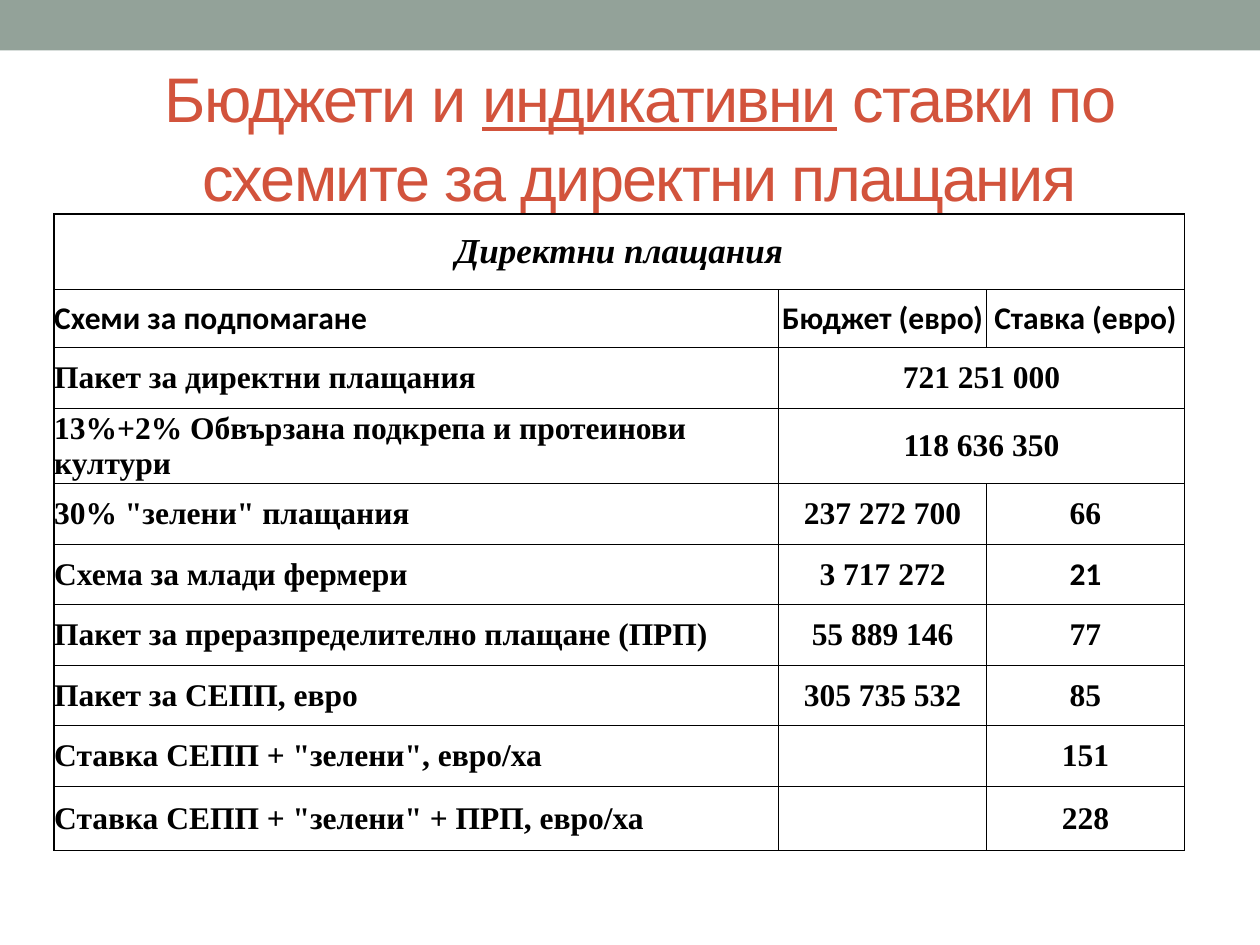
from dataclasses import dataclass
from lxml.etree import SubElement
from pptx import Presentation
from pptx.dml.color import RGBColor
from pptx.enum.shapes import MSO_SHAPE
from pptx.enum.text import MSO_ANCHOR, PP_ALIGN
from pptx.oxml.ns import qn
from pptx.util import Inches, Pt


@dataclass(frozen=True)
class Theme:
    band: str = "93A299"
    title: str = "D2533C"
    ink: str = "000000"
    paper: str = "FFFFFF"
    big: int = 36
    head: int = 20
    body: int = 18
    sans: str = "Arial"
    serif: str = "Times New Roman"
    label: str = "Calibri"
    thin: float = 0.5
    thick: float = 1


class Deck:
    def __init__(self, theme, wide=10, high=7.5):
        self.theme = theme
        self.prs = Presentation()
        self.prs.slide_width, self.prs.slide_height = Inches(wide), Inches(high)
        self.slide = self.prs.slides.add_slide(self.prs.slide_layouts[6])

    def place(self, x, y, w, h):
        wide, high = self.prs.slide_width, self.prs.slide_height
        return [int(v * side) for v, side in zip((x, y, w, h), (wide, high) * 2)]

    def words(self, para, text, color, **form):
        run = para.add_run()
        run.text = text
        run.font.color.rgb = RGBColor.from_string(color)
        for key, value in form.items():
            setattr(run.font, key, value)
        return run

    def band(self, *box):
        shape = self.slide.shapes.add_shape(MSO_SHAPE.RECTANGLE, *self.place(*box))
        shape.shadow.inherit = False
        shape.fill.solid()
        shape.fill.fore_color.rgb = RGBColor.from_string(self.theme.band)
        shape.line.fill.background()

    def title(self, parts, *box):
        look = self.theme
        frame = self.slide.shapes.add_textbox(*self.place(*box)).text_frame
        frame.word_wrap = True
        frame.vertical_anchor = MSO_ANCHOR.MIDDLE
        para = frame.paragraphs[0]
        para.alignment, para.line_spacing = PP_ALIGN.CENTER, 1.05
        for text, under in parts:
            run = self.words(para, text, look.title, name=look.sans,
                             size=Pt(look.big), underline=under)
            run.font._element.set("spc", "-100")

    def edge(self, cell, sides):
        props = cell._tc.get_or_add_tcPr()
        for side in "LRTB":
            line = SubElement(props, qn(f"a:ln{side}"), w=str(Pt(sides[side])))
            fill = SubElement(line, qn("a:solidFill"))
            SubElement(fill, qn("a:srgbClr"), val=self.theme.ink)

    def cell(self, cell, text, form, align, filled):
        margins = dict.fromkeys(("margin_left", "margin_right", "margin_top", "margin_bottom"), 0)
        for key, value in {**margins, "vertical_anchor": MSO_ANCHOR.MIDDLE}.items():
            setattr(cell, key, value)
        if filled:
            cell.fill.solid()
            cell.fill.fore_color.rgb = RGBColor.from_string(self.theme.paper)
        else:
            cell.fill.background()
        para = cell.text_frame.paragraphs[0]
        para.alignment = align
        if text:
            self.words(para, text, self.theme.ink, bold=True, **form)

    def table(self, rows, cols, highs, labels, *box):
        look = self.theme
        last, end = len(rows) - 1, len(cols) - 1
        table = self.slide.shapes.add_table(len(rows), len(cols), *self.place(*box)).table
        table.first_row = table.horz_banding = False
        for col, wide in zip(table.columns, cols):
            col.width = Inches(wide)
        for row, high in zip(table.rows, highs):
            row.height = Inches(high)
        for r, row in enumerate(rows):
            for c in range(end + 1):
                stop = c if c < len(row) - 1 else end
                rule = {"L": c == 0 or (c == 2 and r >= last - 1),
                        "R": stop == end or (c == 1 and r >= last - 1),
                        "T": r == 0, "B": r == last}
                cell = table.cell(r, c)
                self.edge(cell, {k: look.thick if v else look.thin for k, v in rule.items()})
                name = look.label if (r, c) in labels else look.serif
                form = {"name": name, "size": Pt(look.body if r else look.head), "italic": r == 0}
                align = PP_ALIGN.CENTER if c or r == 0 else PP_ALIGN.LEFT
                self.cell(cell, row[c] if c < len(row) else "", form, align, r > 1)
            if len(row) <= end:
                table.cell(r, len(row) - 1).merge(table.cell(r, end))


ROWS = [
    ["Директни плащания"],
    ["Схеми за подпомагане", "Бюджет (евро)", "Ставка (евро)"],
    ["Пакет за директни плащания", "721 251 000"],
    ["13%+2% Обвързана подкрепа и протеинови култури", "118 636 350"],
    ['30% "зелени" плащания', "237 272 700", "66"],
    ["Схема за млади фермери", "3 717 272", "21"],
    ["Пакет за преразпределително плащане (ПРП)", "55 889 146", "77"],
    ["Пакет за СЕПП, евро", "305 735 532", "85"],
    ['Ставка СЕПП + "зелени", евро/ха', "", "151"],
    ['Ставка СЕПП + "зелени" + ПРП, евро/ха', "", "228"],
]
TITLE = [("Бюджети и ", False), ("индикативни", True),
         (" ставки по схемите за директни плащания", False)]


def main():
    deck = Deck(Theme())
    deck.band(0, 0, 1, 0.4 / 7.5)
    deck.title(TITLE, 0.035, 0.08, 0.945, 0.125)
    deck.table(ROWS, [5.75, 1.65, 1.57], [0.6, 0.46] + [0.48] * 7 + [0.51],
               {(1, 0), (1, 1), (1, 2), (5, 2)}, 0.043, 1.7 / 7.5, 0.9, 0.67)
    deck.prs.save("out.pptx")


if __name__ == "__main__":
    main()
